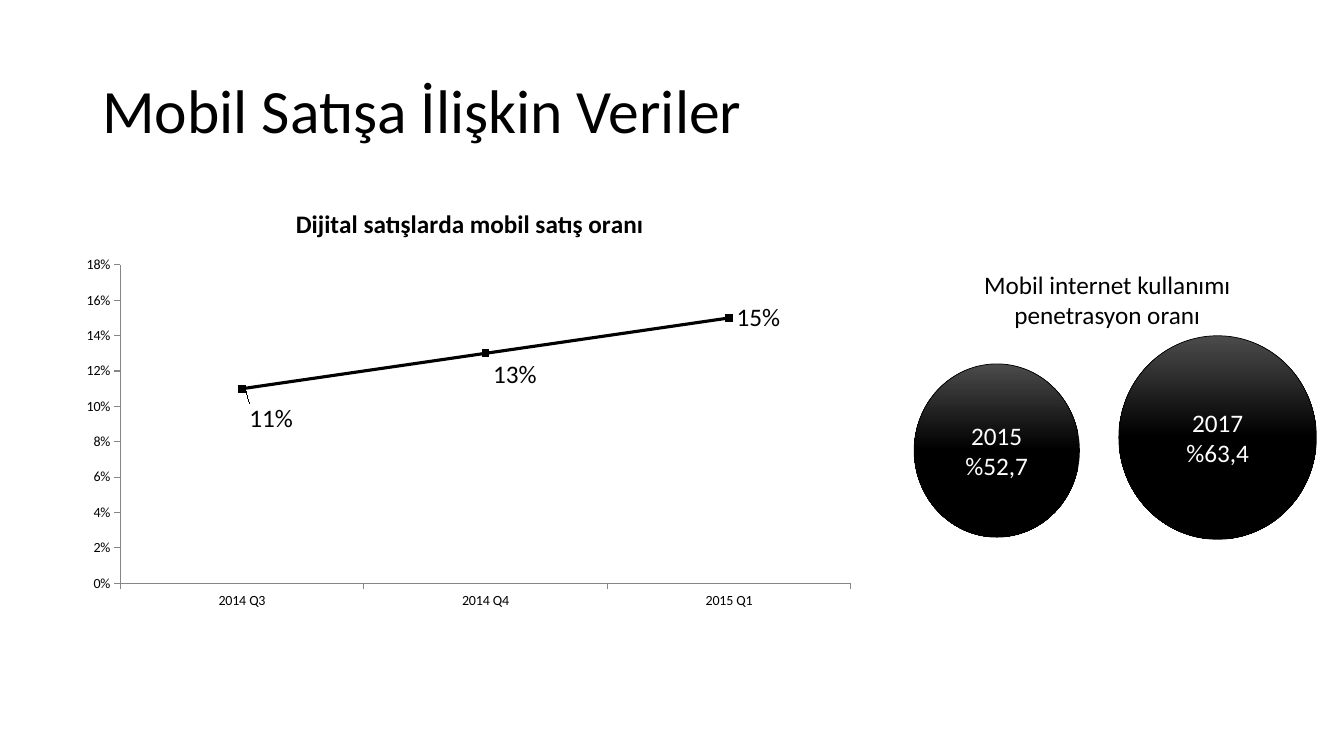
from lxml import etree
from pptx import Presentation
from pptx.chart.data import CategoryChartData
from pptx.dml.color import RGBColor
from pptx.enum import chart as ch, shapes, text
from pptx.oxml import ns
from pptx.util import Pt

BLACK = RGBColor(0, 0, 0)
WHITE = RGBColor(255, 255, 255)
DARK = RGBColor(0x4B, 0x4B, 0x4B)
GRAY = RGBColor(0x86, 0x86, 0x86)


def layout(after, **parts):
    """Put a manual layout right after the given chart element."""
    frame = etree.Element(ns.qn("c:layout"))
    manual = etree.SubElement(frame, ns.qn("c:manualLayout"))
    for name, val in parts.items():
        etree.SubElement(manual, ns.qn("c:" + name)).set("val", str(val))
    after.addnext(frame)


class Board:
    face = "Calibri"

    def __init__(self, slide):
        self.shapes = slide.shapes

    def style(self, font, size, color=BLACK, bold=False):
        font.name, font.size, font.bold = self.face, Pt(size), bold
        font.color.rgb = color

    def fill_text(self, frame, lines, size, color=BLACK,
                  align=text.PP_ALIGN.CENTER, anchor=text.MSO_ANCHOR.MIDDLE, space=1.0):
        frame.word_wrap = True
        frame.vertical_anchor = anchor
        for i, line in enumerate(lines):
            para = frame.add_paragraph() if i else frame.paragraphs[0]
            para.alignment, para.line_spacing = align, space
            run = para.add_run()
            run.text = line
            self.style(run.font, size, color)

    def label(self, box, lines, size, **look):
        item = self.shapes.add_textbox(*map(Pt, box))
        self.fill_text(item.text_frame, lines, size, **look)

    def ball(self, box, lines):
        item = self.shapes.add_shape(shapes.MSO_SHAPE.OVAL, *map(Pt, box))
        item.shadow.inherit = False
        item.fill.gradient()
        item.fill.gradient_angle = 270
        for stop, place, color in zip(item.fill.gradient_stops, (0, 0.5), (DARK, BLACK)):
            stop.position, stop.color.rgb = place, color
        item.line.color.rgb = BLACK
        item.line.width = Pt(0.5)
        self.fill_text(item.text_frame, lines, 18, WHITE)

    def graph(self, box, title, cats, vals, drops):
        """Draw a line chart; drops maps a point to how far its label is lowered."""
        data = CategoryChartData(number_format="0%")
        data.categories = cats
        data.add_series(title, vals)
        chart = self.shapes.add_chart(
            ch.XL_CHART_TYPE.LINE_MARKERS, *map(Pt, box), data).chart
        chart.has_legend = False
        self.style(chart.font, 10)
        chart.has_title = True
        run = chart.chart_title.text_frame.paragraphs[0].add_run()
        run.text = title
        self.style(run.font, 18, bold=True)
        chart.chart_title.include_in_layout = False

        for axis in (chart.category_axis, chart.value_axis):
            axis.has_major_gridlines = False
            axis.major_tick_mark = ch.XL_TICK_MARK.OUTSIDE
            axis.format.line.color.rgb = GRAY
            axis.format.line.width = Pt(0.75)
        scale = chart.value_axis
        scale.minimum_scale, scale.maximum_scale, scale.major_unit = 0, 0.18, 0.02
        scale.tick_labels.number_format = "0%"
        scale.tick_labels.number_format_is_linked = False

        plot = chart.plots[0]
        plot.vary_by_categories = False
        series = plot.series[0]
        series.smooth = False
        series.format.line.color.rgb = BLACK
        series.format.line.width = Pt(2.25)
        mark = series.marker
        mark.style, mark.size = ch.XL_MARKER_STYLE.SQUARE, 5
        mark.format.fill.solid()
        mark.format.fill.fore_color.rgb = BLACK
        mark.format.line.color.rgb = BLACK

        tags = series.data_labels
        tags.show_value = True
        tags.number_format, tags.number_format_is_linked = "0%", False
        tags.position = ch.XL_LABEL_POSITION.RIGHT
        self.style(tags.font, 18)
        for i in drops:
            tag = series.points[i].data_label
            self.style(tag.font, 18)
            tag.position = ch.XL_LABEL_POSITION.RIGHT
        for idx in series._element.xpath("c:dLbls/c:dLbl/c:idx"):
            layout(idx, x=0, y=drops[int(idx.get("val"))])

        area = chart._chartSpace.xpath("c:chart/c:plotArea")[0]
        for old in area.xpath("c:layout"):
            area.remove(old)
        first = etree.Element(ns.qn("c:layout"))
        area.insert(0, first)
        layout(first, layoutTarget="inner", xMode="edge", yMode="edge",
               x=0.06, y=0.18, w=0.92, h=0.74)
        area.remove(first)


def main():
    deck = Presentation()
    deck.slide_width, deck.slide_height = Pt(960), Pt(540)
    board = Board(deck.slides.add_slide(deck.slide_layouts[6]))
    board.label((66, 28.8, 828, 104.4), ["Mobil Satışa İlişkin Veriler"], 44,
                align=text.PP_ALIGN.LEFT, space=0.9)
    board.graph((51.8, 133.9, 567.4, 307.4), "Dijital satışlarda mobil satış oranı",
                ["2014 Q3", "2014 Q4", "2015 Q1"], [0.11, 0.13, 0.15],
                {0: 0.07, 1: 0.05})
    board.ball((653, 259.9, 118.1, 123.8), ["2015", "%52,7"])
    board.ball((799.2, 239.8, 141.1, 145.4), ["2017", "%63,4"])
    board.label((637.9, 188.6, 306, 51.1),
                ["Mobil internet kullanımı", "penetrasyon oranı"], 18,
                anchor=text.MSO_ANCHOR.TOP)
    deck.save("out.pptx")


if __name__ == "__main__":
    main()
